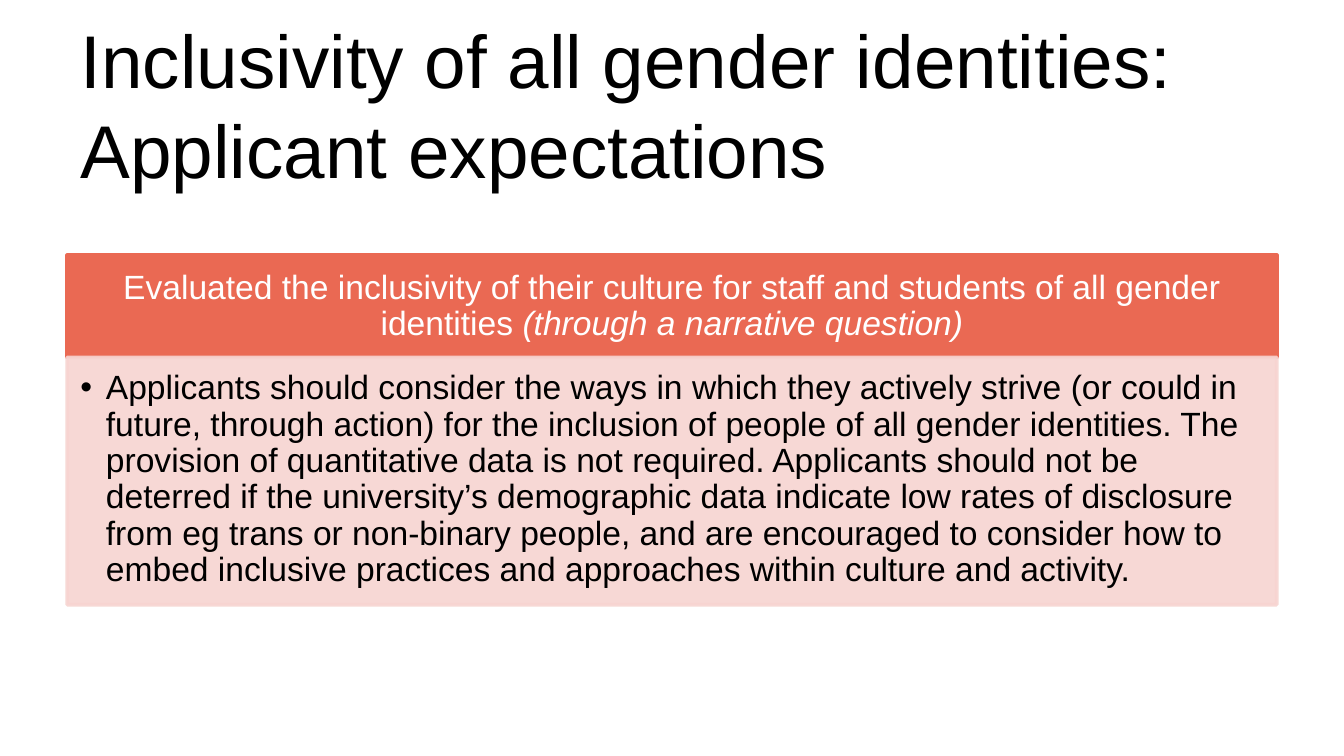
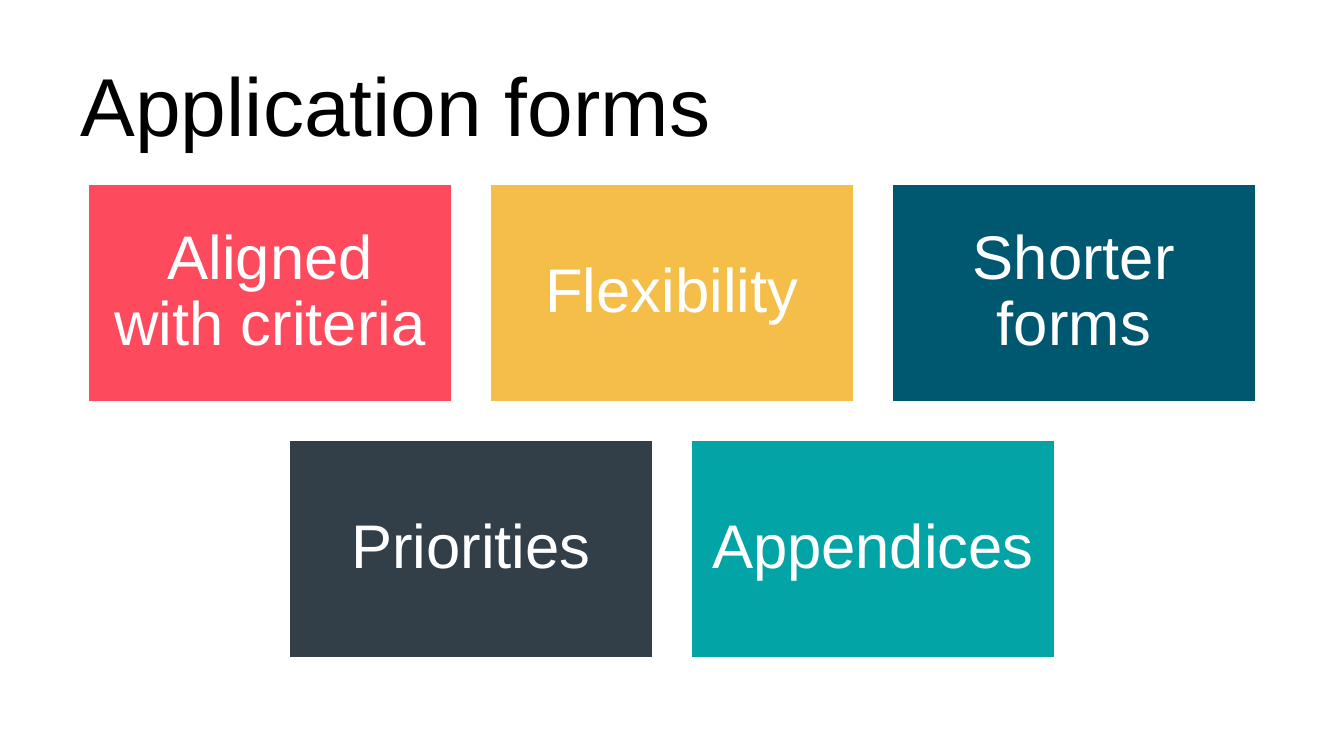
from lxml.etree import SubElement
from pptx import Presentation
from pptx.dml.color import RGBColor
from pptx.enum.shapes import MSO_SHAPE as Shape
from pptx.enum.text import MSO_ANCHOR as Anchor, MSO_AUTO_SIZE as Fit, PP_ALIGN as Align
from pptx.oxml.ns import qn
from pptx.util import Inches, Pt

FONT = "Arial"
BLACK = RGBColor(0x00, 0x00, 0x00)
WHITE = RGBColor(0xFF, 0xFF, 0xFF)
CORAL = RGBColor(0xEA, 0x69, 0x53)
BLUSH = RGBColor(0xF7, 0xD4, 0xD1)
RED = RGBColor(0xFE, 0x4A, 0x5D)
GOLD = RGBColor(0xF4, 0xBE, 0x49)
NAVY = RGBColor(0x00, 0x58, 0x70)
SLATE = RGBColor(0x32, 0x3E, 0x48)
TEAL = RGBColor(0x02, 0xA4, 0xA6)

TITLE = (0.5, 0.3, 9, 0.94)
PANEL = (0.5, 1.9, 9, 2.6)
GRID = (0.65, 1.36, 8.7, 3.54)

HEAD = [
    ("Evaluated the inclusivity of their culture for staff and students of all gender identities ", False),
    ("(through a narrative question)", True),
]
BODY = (
    "Applicants should consider the ways in which they actively strive (or could in future, "
    "through action) for the inclusion of people of all gender identities. The provision of "
    "quantitative data is not required. Applicants should not be deterred if the university’s "
    "demographic data indicate low rates of disclosure from eg trans or non-binary people, and "
    "are encouraged to consider how to embed inclusive practices and approaches within culture "
    "and activity."
)
TILES = [
    [("Aligned with criteria", RED), ("Flexibility", GOLD), ("Shorter forms", NAVY)],
    [("Priorities", SLATE), ("Appendices", TEAL)],
]


def write(shape, text, size=18, color=BLACK, align=Align.LEFT, anchor=Anchor.MIDDLE,
          inset=(0.1, 0.05, 0.1, 0.05), spacing=0.9, bullet=None):
    """Fill a shape with one paragraph, given as a string or as (text, italic) runs."""
    frame = shape.text_frame
    frame.word_wrap = True
    frame.auto_size = Fit.NONE
    frame.vertical_anchor = anchor
    (frame.margin_left, frame.margin_top,
     frame.margin_right, frame.margin_bottom) = map(Inches, inset)
    para = frame.paragraphs[0]
    if bullet:
        props = para._p.get_or_add_pPr()
        props.set("marL", str(Inches(bullet)))
        props.set("indent", str(-Inches(bullet)))
        SubElement(props, qn("a:buFont"), typeface=FONT)
        SubElement(props, qn("a:buChar"), char="•")
    para.alignment = align
    para.line_spacing = spacing
    for part, italic in [(text, False)] if isinstance(text, str) else text:
        run = para.add_run()
        run.text = part
        run.font.name = FONT
        run.font.size = Pt(size)
        run.font.italic = italic
        run.font.color.rgb = color


def block(slide, box, fill, line, alpha=None):
    """Add a flat rectangle, with an optional opacity in percent."""
    shape = slide.shapes.add_shape(Shape.RECTANGLE, *map(Inches, box))
    shape.shadow.inherit = False
    shape.fill.solid()
    shape.fill.fore_color.rgb = fill
    shape.line.color.rgb = line
    shape.line.width = Pt(2)
    if alpha:
        for color in shape._element.spPr.iter(qn("a:srgbClr")):
            SubElement(color, qn("a:alpha"), val=str(alpha * 1000))
    return shape


def start(deck, text, size):
    """Add a slide with its title."""
    slide = deck.slides.add_slide(deck.slide_layouts[5])
    title = slide.shapes.title
    title.left, title.top, title.width, title.height = map(Inches, TITLE)
    write(title, text, size=size, spacing=1.0)
    return slide


def panel(slide, box, head, body):
    """Stack a coloured heading on a pale bulleted body."""
    left, top, width, height = box
    bar = 0.76
    cap = block(slide, (left, top, width, bar), CORAL, CORAL)
    write(cap, head, color=WHITE, align=Align.CENTER, inset=(0.14, 0.08, 0.14, 0.08))
    base = block(slide, (left, top + bar, width, height - bar), BLUSH, BLUSH, alpha=90)
    write(base, body, anchor=Anchor.TOP, inset=(0.1, 0.1, 0.14, 0.16), bullet=0.19)


def grid(slide, box, rows, gap=0.27):
    """Lay out rows of equal tiles, each row centred in the box."""
    left, top, width, height = box
    most = max(map(len, rows))
    wide = (width - gap * (most - 1)) / most
    high = (height - gap * (len(rows) - 1)) / len(rows)
    for r, row in enumerate(rows):
        shift = (most - len(row)) * (wide + gap) / 2
        for c, (text, fill) in enumerate(row):
            spot = (left + shift + c * (wide + gap), top + r * (high + gap), wide, high)
            tile = block(slide, spot, fill, WHITE)
            write(tile, text, size=33, color=WHITE, align=Align.CENTER, inset=(0.14,) * 4)


def main():
    """Build and save the deck."""
    deck = Presentation()
    deck.slide_width = Inches(10)
    deck.slide_height = deck.slide_width * 9 // 16
    slide = start(deck, "Inclusivity of all gender identities: Applicant expectations", 40)
    panel(slide, PANEL, HEAD, BODY)
    slide = start(deck, "Application forms", 44)
    grid(slide, GRID, TILES)
    deck.save("out.pptx")


if __name__ == "__main__":
    main()
